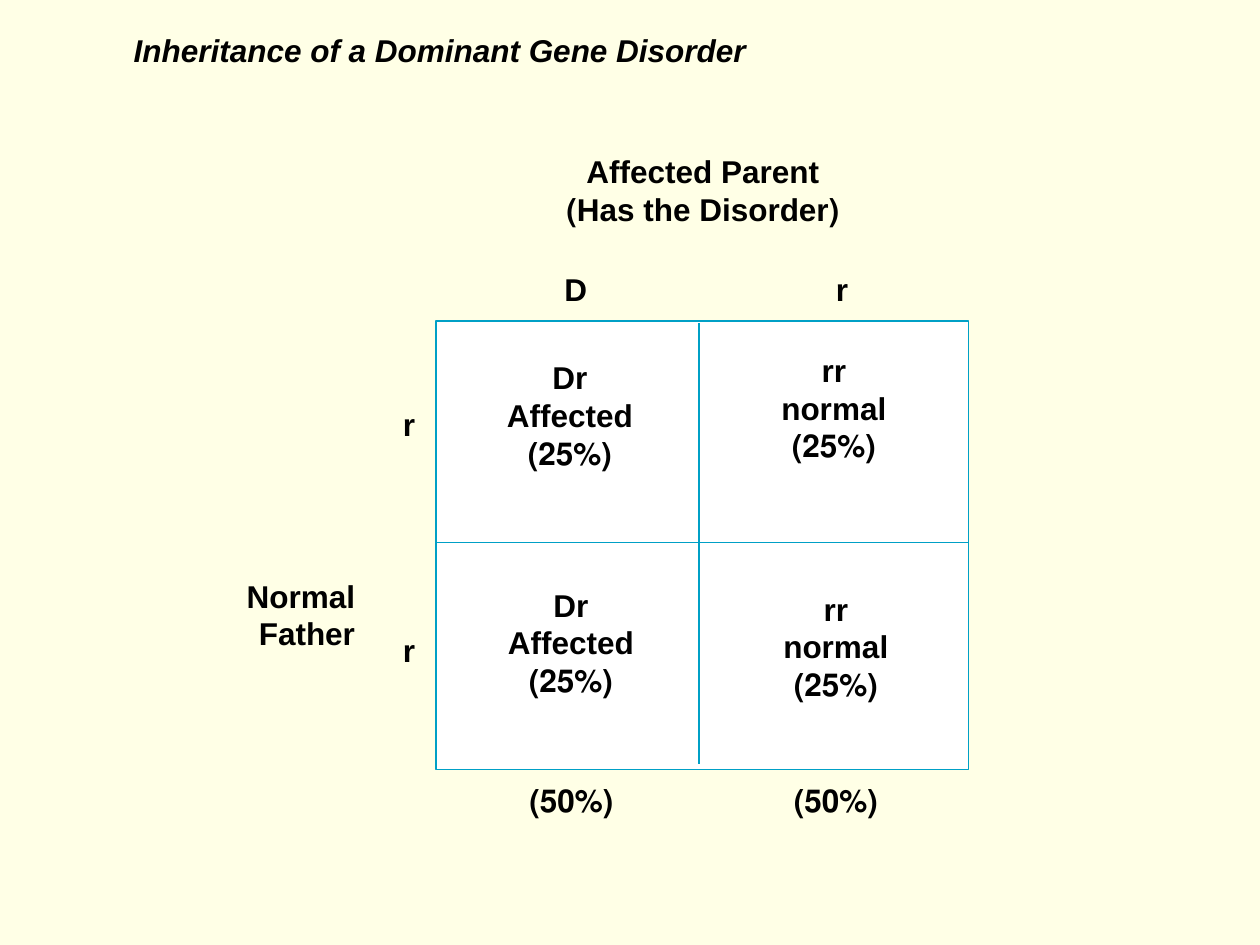
from lxml.etree import SubElement
from pptx import Presentation
from pptx.dml.color import RGBColor
from pptx.enum.shapes import MSO_CONNECTOR, MSO_SHAPE
from pptx.enum.text import MSO_ANCHOR, PP_ALIGN
from pptx.oxml.ns import qn
from pptx.util import Cm, Pt

INK, PAPER, WHITE, BLUE = "000000", "FFFFE6", "FFFFFF", "00A0C6"


def tint(color, code):
    color.rgb = RGBColor.from_string(code)


def write(shape, lines, align=PP_ALIGN.CENTER, slant=False):
    frame = shape.text_frame
    frame.word_wrap = False
    frame.vertical_anchor = MSO_ANCHOR.TOP
    frame.margin_left = frame.margin_right = 0
    frame.margin_top = frame.margin_bottom = 0
    frame.text = "\n".join(lines)
    for para in frame.paragraphs:
        para.alignment = align
        para.line_spacing = Pt(21.5)
        para.space_before = Pt(0)
        para._p.get_or_add_pPr().set("rtl", "1")
        font = para.font
        font.name, font.size = "Arial", Pt(18)
        font.bold, font.italic = True, slant
        tint(font.color, INK)


def label(slide, x, y, wide, *lines, align=PP_ALIGN.CENTER):
    high = 1.02 * len(lines)
    box = slide.shapes.add_textbox(Cm(x), Cm(y), Cm(wide), Cm(high))
    write(box, lines, align)


def panel(slide, x, y, wide, high, color, edge=None):
    box = slide.shapes.add_shape(
        MSO_SHAPE.RECTANGLE, Cm(x), Cm(y), Cm(wide), Cm(high))
    box.shadow.inherit = False
    box.fill.solid()
    tint(box.fill.fore_color, color)
    if edge:
        tint(box.line.color, edge)
        box.line.width = Pt(0.75)
    else:
        box.line.fill.background()
    return box


def rule(slide, *ends):
    line = slide.shapes.add_connector(MSO_CONNECTOR.STRAIGHT, *map(Cm, ends))
    tint(line.line.color, BLUE)
    line.line.width = Pt(0.75)
    SubElement(line._element.spPr, qn("a:effectLst"))


def heading(slide, x, y, wide, high):
    title = slide.shapes.title
    title.left, title.top = Cm(x), Cm(y)
    title.width, title.height = Cm(wide), Cm(high)
    write(title, ["Inheritance of a Dominant Gene Disorder"], slant=True)


def square(slide, x, y, wide, high):
    panel(slide, x, y, wide, high, WHITE, BLUE)
    midx, midy = x + 5.3, y + 4.46
    rule(slide, midx, y + 0.05, midx, y + high - 0.1)
    rule(slide, x, midy, x + wide, midy)

    for gene, left, span, share in (("D", 2.51, 0.61, 1.6),
                                    ("r", 8.02, 0.33, 6.93)):
        label(slide, x + left, y - 1.03, span, gene)
        label(slide, x + share, y + 9.28, 2.26, "(50%)")
    for top in (1.69, 6.26):
        label(slide, x - 0.71, y + top, 0.33, "r")

    cells = (
        (1.0, 0.76, 3.4, "Dr", "Affected"),
        (6.61, 0.61, 2.82, "rr", "normal"),
        (1.02, 5.34, 3.4, "Dr", "Affected"),
        (6.65, 5.42, 2.82, "rr", "normal"),
    )
    for left, top, span, pair, state in cells:
        label(slide, x + left, y + top, span, pair, state, "(25%)")

    label(slide, x + 1.71, y - 3.4, 7.34,
          "Affected Parent", "(Has the Disorder)")
    label(slide, x - 4.55, y + 5.16, 2.92, "Normal", "Father",
          align=PP_ALIGN.RIGHT)


def main():
    deck = Presentation()
    deck.slide_width, deck.slide_height = Cm(25.4), Cm(19.05)
    slide = deck.slides.add_slide(deck.slide_layouts[5])
    page = panel(slide, 0, 0, 25.4, 19.05, PAPER)
    slide.shapes.title._element.addprevious(page._element)
    heading(slide, 0.64, 0.63, 16.46, 1.02)
    square(slide, 8.79, 6.47, 10.74, 9.04)
    deck.save("out.pptx")


if __name__ == "__main__":
    main()
